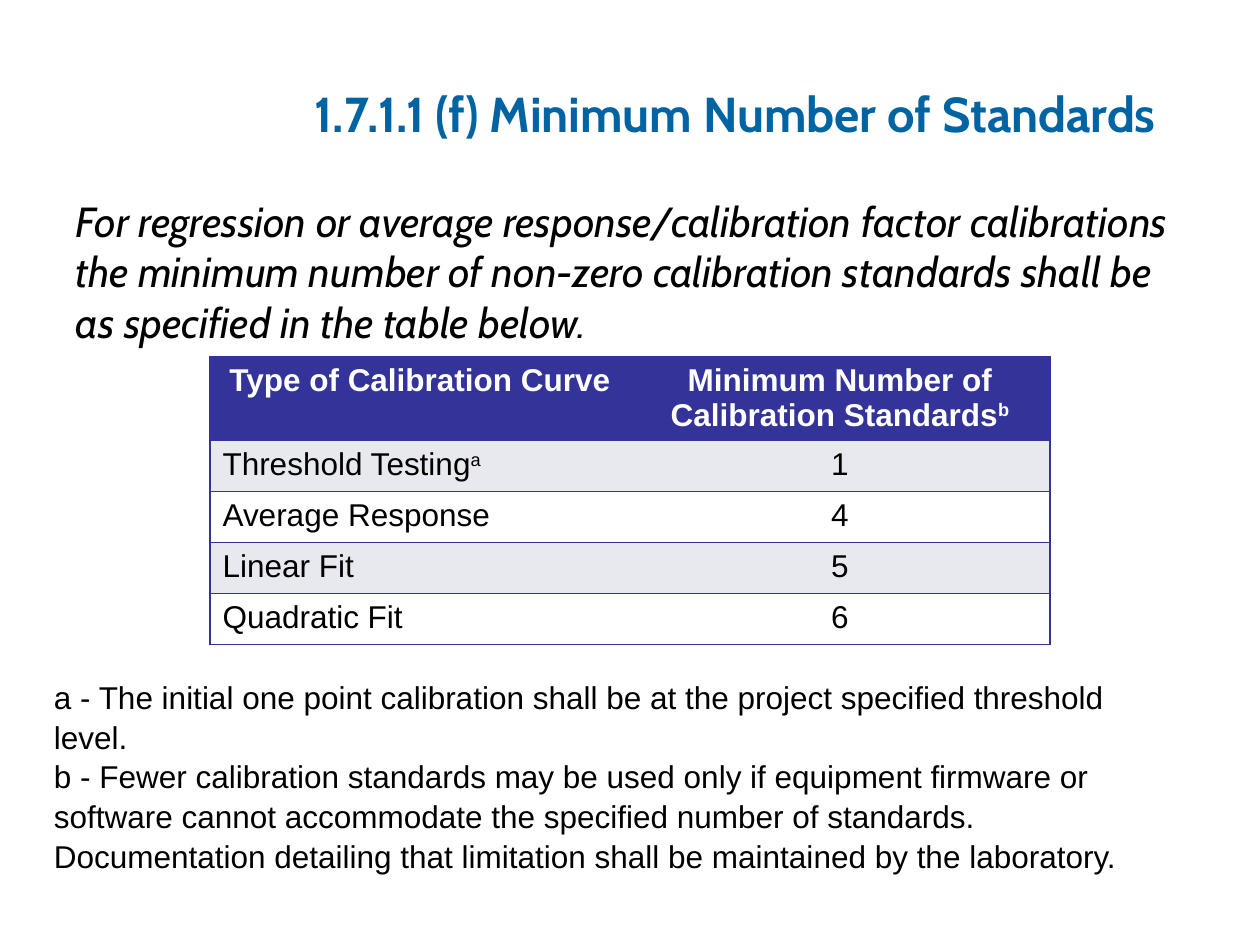
"""Build a slide on the minimum number of calibration standards."""
from dataclasses import dataclass

from lxml import etree
from pptx import Presentation
from pptx import util as u
from pptx.dml.color import RGBColor
from pptx.enum import text
from pptx.oxml import ns

WIDTH, HEIGHT = 10, 7.5
COLORS = {"title": "0064A2", "ink": "000000", "header": "333399",
          "band": "E8E8EF", "plain": "FFFFFF"}
CENTER, LEFT = text.PP_ALIGN.CENTER, text.PP_ALIGN.LEFT


@dataclass(frozen=True)
class Area:
    """A rectangle given as shares of the slide's width and height."""
    left: float
    top: float
    width: float
    height: float

    def lengths(self) -> list[u.Length]:
        return [u.Inches(self.left * WIDTH), u.Inches(self.top * HEIGHT),
                u.Inches(self.width * WIDTH), u.Inches(self.height * HEIGHT)]


@dataclass(frozen=True)
class Row:
    """A table row; note is the superscript mark of one column."""
    curve: str
    standards: str
    curve_note: str = ""
    standards_note: str = ""


TITLE_AREA = Area(0.221, 0.04, 0.725, 0.16)
BODY_AREA = Area(0.05, 0.2, 0.9, 0.744)
TABLE_AREA = Area(1 / 6, 0.377, 2 / 3, 0.31)
NOTES_AREA = Area(0.033, 0.709, 0.867, 0.216)
HEADER_HEIGHT, ROW_HEIGHT = 0.67, 0.405

ROWS = [
    Row("Type of Calibration Curve", "Minimum Number of Calibration Standards",
        standards_note="b"),
    Row("Threshold Testing", "1", curve_note="a"),
    Row("Average Response", "4"),
    Row("Linear Fit", "5"),
    Row("Quadratic Fit", "6"),
]
NOTES = [
    "a - The initial one point calibration shall be at the project specified "
    "threshold level.",
    "b - Fewer calibration standards may be used only if equipment firmware or "
    "software cannot accommodate the specified number of standards. "
    "Documentation detailing that limitation shall be maintained by the laboratory.",
]


def write(para, words: str, *, size: float = 18, font: str = "Arial",
          color: str = "ink", bold: bool = False, italic: bool = False,
          align=LEFT, note: str = "") -> None:
    """Write formatted words and an optional superscript note mark."""
    para.alignment = align
    for part, baseline in ((words, 0), (note, 30000)):
        if not part:
            continue
        span = para.add_run()
        span.text = part
        span.font.size, span.font.name = u.Pt(size), font
        span.font.bold, span.font.italic = bold, italic
        span.font.color.rgb = RGBColor.from_string(COLORS[color])
        if baseline:
            span._r.get_or_add_rPr().set("baseline", str(baseline))


def place(shape, area: Area) -> None:
    """Move a shape to an area."""
    shape.left, shape.top, shape.width, shape.height = area.lengths()


def remove_bullet(para) -> None:
    """Clear the bullet and indent of a paragraph."""
    properties = para._p.get_or_add_pPr()
    properties.set("marL", "0")
    properties.set("indent", "0")
    etree.SubElement(properties, ns.qn("a:buNone"))


def set_borders(cell, sides: str) -> None:
    """Draw the named sides of a cell and clear the others."""
    properties = cell._tc.get_or_add_tcPr()
    for side in "LRTB":
        line = etree.SubElement(properties, ns.qn(f"a:ln{side}"), w=str(u.Pt(1)))
        if side in sides:
            fill = etree.SubElement(line, ns.qn("a:solidFill"))
            etree.SubElement(fill, ns.qn("a:srgbClr"), val=COLORS["header"])
        else:
            etree.SubElement(line, ns.qn("a:noFill"))


def fill_cell(cell, words: str, note: str, row: int, column: int) -> None:
    """Style one table cell by its place in the grid."""
    is_header = row == 0
    fill = "header" if is_header else ("band" if row % 2 else "plain")
    set_borders(cell, "LTB" if column == 0 else "RTB")
    cell.fill.solid()
    cell.fill.fore_color.rgb = RGBColor.from_string(COLORS[fill])
    write(cell.text_frame.paragraphs[0], words, note=note, bold=is_header,
          color="plain" if is_header else "ink",
          align=CENTER if is_header or column else LEFT)


def add_standards_table(slide) -> None:
    """Add the table of curve types and their standards."""
    table = slide.shapes.add_table(len(ROWS), 2, *TABLE_AREA.lengths()).table
    for index, row in enumerate(ROWS):
        table.rows[index].height = u.Inches(ROW_HEIGHT if index else HEADER_HEIGHT)
        fill_cell(table.cell(index, 0), row.curve, row.curve_note, index, 0)
        fill_cell(table.cell(index, 1), row.standards, row.standards_note, index, 1)


def add_notes(slide) -> None:
    """Add the table's footnotes."""
    frame = slide.shapes.add_textbox(*NOTES_AREA.lengths()).text_frame
    frame.word_wrap = True
    for index, words in enumerate(NOTES):
        para = frame.add_paragraph() if index else frame.paragraphs[0]
        para.line_spacing = 1.05
        write(para, words)


def main() -> None:
    """Build and save the deck."""
    deck = Presentation()
    deck.slide_width, deck.slide_height = u.Inches(WIDTH), u.Inches(HEIGHT)
    slide = deck.slides.add_slide(deck.slide_layouts[1])
    title, body = slide.placeholders
    place(title, TITLE_AREA)
    title.text_frame.vertical_anchor = text.MSO_ANCHOR.MIDDLE
    write(title.text_frame.paragraphs[0], "1.7.1.1 (f) Minimum Number of Standards",
          size=28, font="Cabin", color="title", bold=True, align=CENTER)
    place(body, BODY_AREA)
    para = body.text_frame.paragraphs[0]
    remove_bullet(para)
    para.space_before = u.Pt(0)
    write(para, "For regression or average response/calibration factor calibrations "
          "the minimum number of non-zero calibration standards shall be as "
          "specified in the table below.", size=24, font="Cabin", italic=True)
    add_standards_table(slide)
    add_notes(slide)
    deck.save("out.pptx")


if __name__ == "__main__":
    main()
